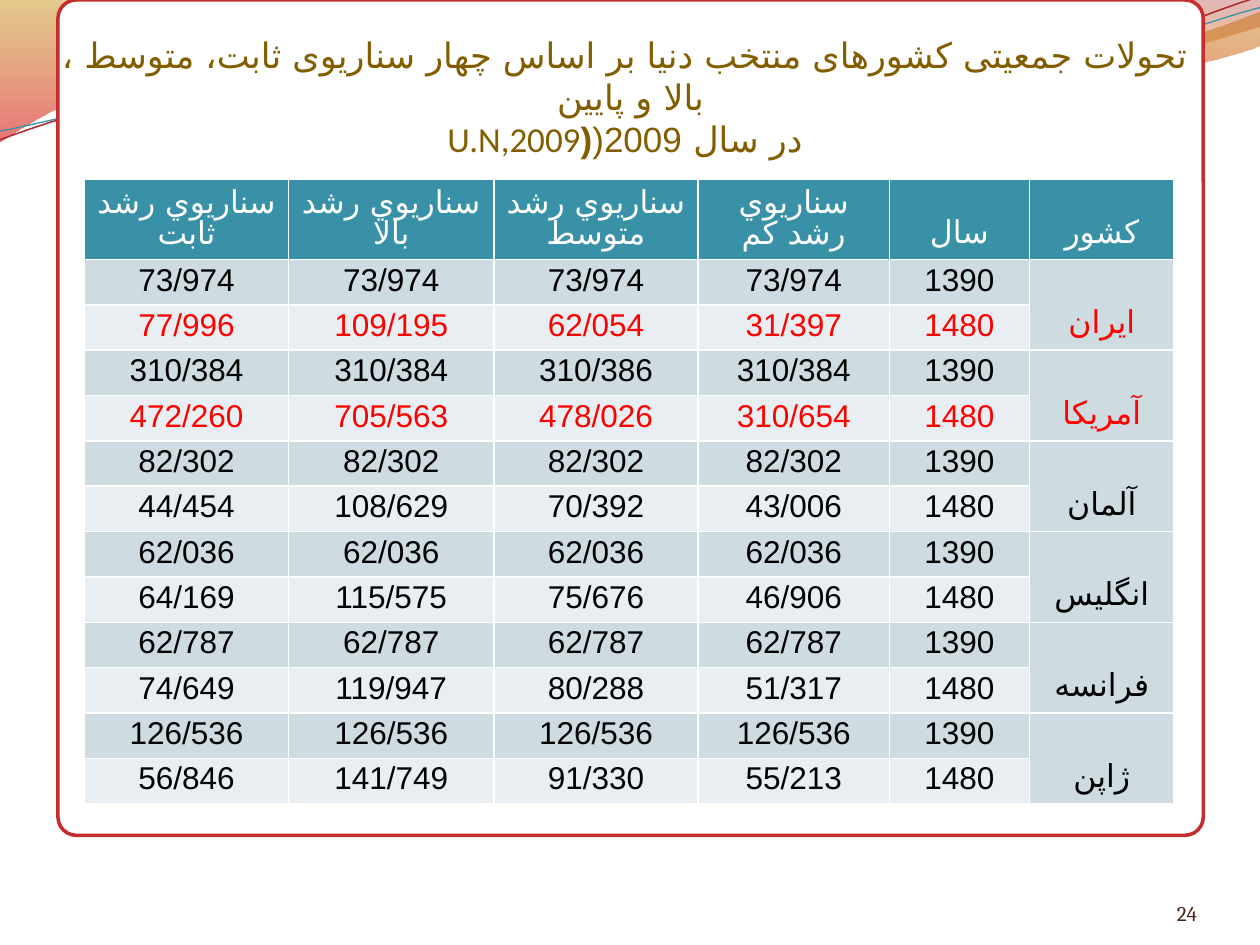
import pptx
import pptx.util
import pptx.dml.color
import pptx.enum.shapes
import pptx.enum.text
import pptx.oxml
import pptx.oxml.ns
import lxml.etree

Inches, Pt = pptx.util.Inches, pptx.util.Pt
RGB = pptx.dml.color.RGBColor.from_string
qn = pptx.oxml.ns.qn
CENTER = pptx.enum.text.PP_ALIGN.CENTER
BOTTOM = pptx.enum.text.MSO_ANCHOR.BOTTOM
MIDDLE = pptx.enum.text.MSO_ANCHOR.MIDDLE

COLORS = {
    "white": "FFFFFF", "black": "000000", "red": "FF0000",
    "frame": "C32D2E", "title": "835E01", "number": "4B251B",
    "header": "3891A7", "band_dark": "CEDCE1", "band_light": "E8EEF1",
    "gold": "C38B00", "scarlet": "D60305", "maroon": "A11112",
    "amber": "E9A600", "red_line": "AC2829", "teal_line": "3891A7",
}


def add_wave(slide, start, segments, closed):
    """Outline from points (x, y) and cubic curves (x1, y1, x2, y2, x, y)."""
    points = [pair for s in segments for pair in zip(s[::2], s[1::2])]
    hundredths = [(round(x * 100), round(y * 100)) for x, y in [start] + points]
    builder = slide.shapes.build_freeform(*hundredths[0], scale=Inches(0.01))
    builder.add_line_segments(hundredths[1:], close=closed)
    wave = builder.convert_to_shape()
    wave.shadow.inherit = False
    # Each run of three line steps that belongs to a curve becomes one cubic
    steps = iter(list(wave._element.spPr.iter(qn("a:lnTo"))))
    for segment in segments:
        step = next(steps)
        if len(segment) == 6:
            curve = step.makeelement(qn("a:cubicBezTo"))
            step.addprevious(curve)
            for part in (step, next(steps), next(steps)):
                curve.append(part[0])
                part.getparent().remove(part)
    return wave


def add_rtl_run(paragraph, text, font, size, color, bold=False):
    paragraph.alignment = CENTER
    paragraph._p.get_or_add_pPr().set("rtl", "1")
    run = paragraph.add_run()
    run.text = text
    run.font.name, run.font.size, run.font.bold = font, Pt(size), bold
    run.font.color.rgb = RGB(COLORS[color])
    # Persian letters and plain figures take different complex-script faces
    persian = any("\u0600" <= letter <= "ۿ" for letter in text)
    script_font = lxml.etree.SubElement(run.font._element, qn("a:cs"))
    script_font.set("typeface", "DejaVu Sans" if persian else "Arial")


prs = pptx.Presentation()
prs.slide_width, prs.slide_height = Inches(10), Inches(7.5)
slide = prs.slides.add_slide(prs.slide_layouts[5])

# Translucent ribbons along the top: (colour, position, opacity %)
ribbons = [
    ((0, 0), [(4.4, -0.01), (4.76, 0.17, 6.64, 0.63, 7.58, 0.63),
              (8.53, 0.63, 9.58, 0.26, 10, 0.09), (10.01, 0.36),
              (9.83, 0.44, 8.7, 0.76, 7.46, 0.75),
              (6.22, 0.75, 3.82, 0.28, 2.57, 0.34),
              (1.29, 0.36, 0.46, 0.83, -0.01, 1.13)],
     [("gold", 0, 45), ("scarlet", 1, 55)]),
    ((4.79, -0.01), [(5.09, 0.11, 6.82, 0.62, 7.69, 0.65),
                     (8.56, 0.69, 9.61, 0.32, 10, 0.21), (10, 0)],
     [("maroon", 0, 30), ("amber", 0.8, 45)]),
]
for start, segments, stops in ribbons:
    ribbon = add_wave(slide, start, segments, True)
    ribbon.line.fill.background()
    ribbon.fill.gradient()
    ribbon.fill.gradient_angle = 270
    for stop, (color, position, opacity) in zip(ribbon.fill.gradient_stops, stops):
        stop.color.rgb = RGB(COLORS[color])
        stop.position = position
    tints = ribbon._element.spPr.find(qn("a:gradFill")).iter(qn("a:srgbClr"))
    for tint, (color, position, opacity) in zip(list(tints), stops):
        lxml.etree.SubElement(tint, qn("a:alpha")).set("val", str(opacity * 1000))

# Thin wave lines
wave_lines = [
    ((0, 1.11), [(0.48, 0.93, 1.58, 0.57, 2.77, 0.52), (3.95, 0.47, 5.93, 0.89, 7.13, 0.8),
                 (8.33, 0.71, 9.38, 0.15, 9.98, -0.02)], "red_line", 0.85),
    ((0, 1.04), [(0.47, 0.96, 1.64, 0.61, 2.83, 0.56), (4.03, 0.51, 5.97, 0.84, 7.17, 0.75),
                 (8.36, 0.67, 9.41, 0.21, 10, 0.06)], "teal_line", 0.75),
]
for start, segments, color, width in wave_lines:
    wave_line = add_wave(slide, start, segments, False)
    wave_line.fill.background()
    wave_line.line.color.rgb = RGB(COLORS[color])
    wave_line.line.width = Pt(width)

# White card
card = slide.shapes.add_shape(pptx.enum.shapes.MSO_SHAPE.ROUNDED_RECTANGLE,
                              Inches(0.46), 0, Inches(9.09), Inches(6.63))
card.adjustments[0] = 0.022
card.shadow.inherit = False
card.fill.solid()
card.fill.fore_color.rgb = RGB(COLORS["white"])
card.line.color.rgb = RGB(COLORS["frame"])
card.line.width = Pt(2)

# Title, brought in front of the card
title = slide.shapes.title
slide.shapes._spTree.append(title._element)
title.left, title.top, title.width, title.height = map(Inches, (0.46, 0.02, 9, 1.25))
heading = title.text_frame
heading.word_wrap = True
heading.auto_size = pptx.enum.text.MSO_AUTO_SIZE.NONE
heading.vertical_anchor = BOTTOM
heading.margin_left = heading.margin_right = heading.margin_bottom = 0
heading.margin_top = Inches(0.05)
headline = heading.paragraphs[0]
add_rtl_run(headline, "تحولات جمعیتی کشورهای منتخب دنیا بر اساس چهار سناریوی ثابت، متوسط ، بالا و پایین ",
            "Calibri", 20, "title")
headline.add_line_break()
for text, bold in (("در سال ", False), ("2009(", False), ("(", True), ("U.N,2009", False)):
    add_rtl_run(headline, text, "Calibri", 20, "title", bold)

# Population table: two years for each country
headers = ["سناريوي رشد ثابت", "سناريوي رشد بالا", "سناريوي رشد متوسط",
           "سناريوي رشد كم", "سال", "كشور"]
years = ["1390", "1480"]
countries = [
    ("ايران", "73/974 73/974 73/974 73/974", "77/996 109/195 62/054 31/397"),
    ("آمريكا", "310/384 310/384 310/386 310/384", "472/260 705/563 478/026 310/654"),
    ("آلمان", "82/302 82/302 82/302 82/302", "44/454 108/629 70/392 43/006"),
    ("انگليس", "62/036 62/036 62/036 62/036", "64/169 115/575 75/676 46/906"),
    ("فرانسه", "62/787 62/787 62/787 62/787", "74/649 119/947 80/288 51/317"),
    ("ژاپن", "126/536 126/536 126/536 126/536", "56/846 141/749 91/330 55/213"),
]
highlighted = ("ايران", "آمريكا")
rows = [headers]
for country, *figures in countries:
    for year, values in zip(years, figures):
        rows.append(values.split() + [year, country if year == years[0] else ""])

column_widths = [1.62, 1.63, 1.62, 1.52, 1.11, 1.15]
row_heights = [0.64] + [0.36] * (len(rows) - 1)
table = slide.shapes.add_table(len(rows), len(headers), Inches(0.67), Inches(1.42),
                               Inches(sum(column_widths)), Inches(sum(row_heights))).table
for column, width in zip(table.columns, column_widths):
    column.width = Inches(width)
for row, height in zip(table.rows, row_heights):
    row.height = Inches(height)
country_column = len(headers) - 1
for top in range(1, len(rows), len(years)):
    table.cell(top, country_column).merge(table.cell(top + 1, country_column))

for r, texts in enumerate(rows):
    for c, text in enumerate(texts):
        cell = table.cell(r, c)
        is_country = c == country_column
        if is_country or (r == 0 and c == country_column - 1):
            cell.vertical_anchor, cell.margin_bottom = BOTTOM, Inches(0.08)
        else:
            cell.vertical_anchor = MIDDLE
        if r == 0:
            fill, color = "header", "white"
        else:
            fill = "band_dark" if r % 2 or is_country else "band_light"
            country = countries[(r - 1) // 2][0]
            red = country in highlighted and (is_country or r % 2 == 0)
            color = "red" if red else "black"
        for side in ("L", "R", "T", "B"):
            border = lxml.etree.SubElement(cell._tc.get_or_add_tcPr(), qn("a:ln" + side))
            border.set("w", str(Pt(1)))
            paint = lxml.etree.SubElement(border, qn("a:solidFill"))
            lxml.etree.SubElement(paint, qn("a:srgbClr")).set("val", COLORS["white"])
        cell.fill.solid()
        cell.fill.fore_color.rgb = RGB(COLORS[fill])
        if text:
            entry = cell.text_frame.paragraphs[0]
            entry.line_spacing = 0.85
            add_rtl_run(entry, text, "Cambria", 18, color)

# Slide number
page = slide.shapes.add_textbox(Inches(8.67), Inches(6.95), Inches(0.83), Inches(0.4)).text_frame
page.word_wrap = True
page.vertical_anchor = BOTTOM
page.margin_left = page.margin_right = page.margin_top = page.margin_bottom = 0
page.paragraphs[0].alignment = pptx.enum.text.PP_ALIGN.RIGHT
number = page.paragraphs[0].add_run()
number.text = "24"
number.font.name, number.font.size = "Cambria", Pt(12)
number.font.color.rgb = RGB(COLORS["number"])

prs.save("out.pptx")
